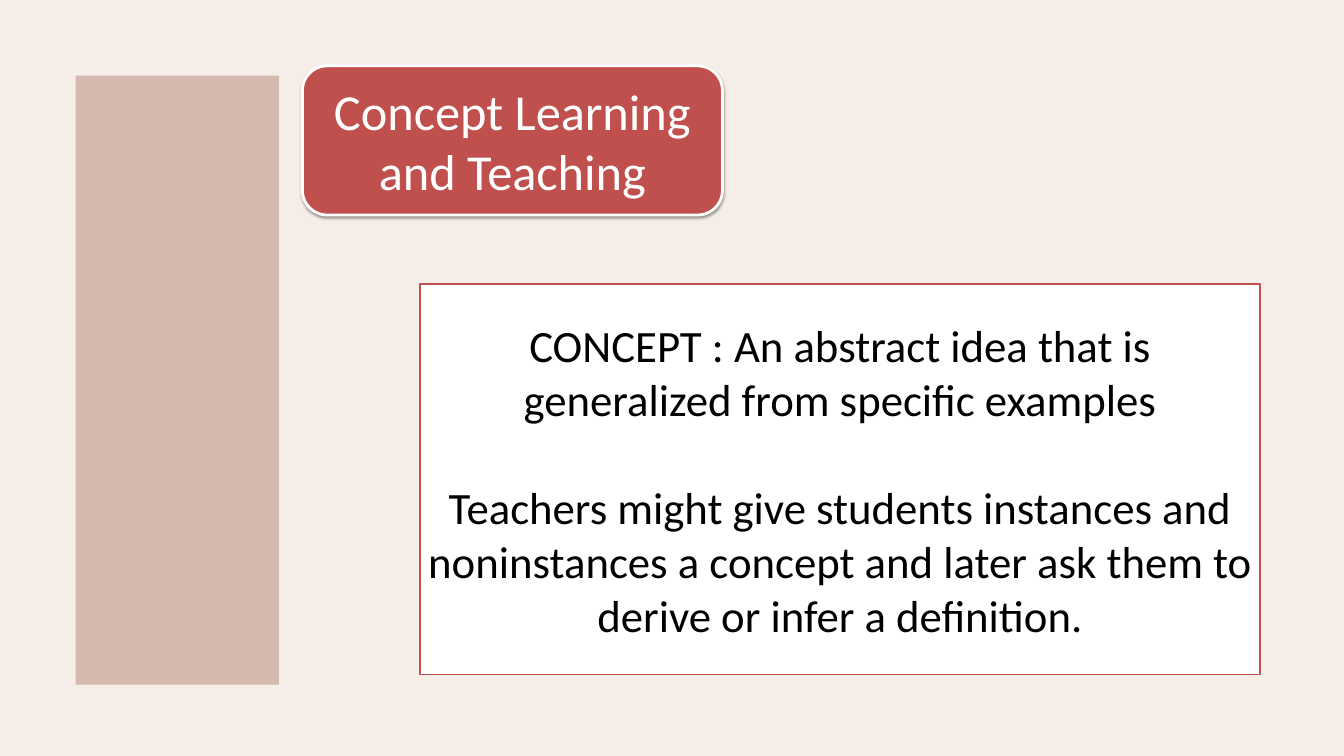
from lxml.etree import SubElement
from pptx import Presentation
from pptx.dml.color import RGBColor
from pptx.enum.shapes import MSO_SHAPE
from pptx.enum.text import MSO_ANCHOR, PP_ALIGN
from pptx.oxml.ns import qn
from pptx.util import Cm, Pt

WIDTH, HEIGHT = 50.8, 28.58
FONT = "Calibri"
PARAGRAPH_GAP = 58.6

# Boxes are left, top, width, height in centimetres.
PANELS = [
    {"box": (0, 0, WIDTH, HEIGHT), "fill": "F5EDE7"},
    {"box": (2.86, 2.86, 7.68, 23.02), "fill": "D5B9AE"},
]
TITLE = {
    "kind": MSO_SHAPE.ROUNDED_RECTANGLE,
    "box": (11.43, 2.49, 15.88, 5.64),
    "fill": "C0504D",
    "line": ("FFFFFF", 3),
    "paragraphs": ["Concept Learning and Teaching"],
    "size": 54,
    "color": "FFFFFF",
}
DEFINITION = {
    "box": (15.88, 10.74, 31.75, 14.76),
    "fill": "FFFFFF",
    "line": ("C0504D", 2),
    "paragraphs": [
        "CONCEPT : An abstract idea that is generalized from specific examples",
        "Teachers might give students instances and noninstances a concept "
        "and later ask them to derive or infer a definition.",
    ],
    "size": 48,
    "color": "000000",
}


def rgb(value):
    return RGBColor.from_string(value)


def add_block(slide, block):
    shape = slide.shapes.add_shape(
        block.get("kind", MSO_SHAPE.RECTANGLE), *map(Cm, block["box"]))
    shape.shadow.inherit = False
    shape.fill.solid()
    shape.fill.fore_color.rgb = rgb(block["fill"])
    if "line" in block:
        color, width = block["line"]
        shape.line.color.rgb = rgb(color)
        shape.line.width = Pt(width)
    else:
        shape.line.fill.background()
    if "paragraphs" in block:
        write_text(shape.text_frame, block)
    return shape


def write_text(text_frame, block):
    text_frame.text = "\n".join(block["paragraphs"])
    text_frame.word_wrap = True
    text_frame.vertical_anchor = MSO_ANCHOR.MIDDLE
    for index, paragraph in enumerate(text_frame.paragraphs):
        paragraph.alignment = PP_ALIGN.CENTER
        if index:
            paragraph.space_before = Pt(PARAGRAPH_GAP)
        for run in paragraph.runs:
            run.font.name = FONT
            run.font.size = Pt(block["size"])
            run.font.color.rgb = rgb(block["color"])


def add_shadow(shape, color, opacity, blur, distance, angle):
    """Cast an outer shadow: opacity in percent, lengths in points."""
    effects = shape.element.spPr.find(qn("a:effectLst"))
    shadow = SubElement(
        effects, qn("a:outerShdw"), blurRad=str(Pt(blur)),
        dist=str(Pt(distance)), dir=str(angle * 60000), rotWithShape="0")
    shade = SubElement(shadow, qn("a:srgbClr"), val=color)
    SubElement(shade, qn("a:alpha"), val=str(opacity * 1000))


def main():
    presentation = Presentation()
    presentation.slide_width = Cm(WIDTH)
    presentation.slide_height = Cm(HEIGHT)
    slide = presentation.slides.add_slide(presentation.slide_layouts[6])
    for panel in PANELS:
        add_block(slide, panel)
    title = add_block(slide, TITLE)
    add_shadow(title, "000000", opacity=38, blur=3.1, distance=1.6, angle=90)
    add_block(slide, DEFINITION)
    presentation.save("out.pptx")


if __name__ == "__main__":
    main()
